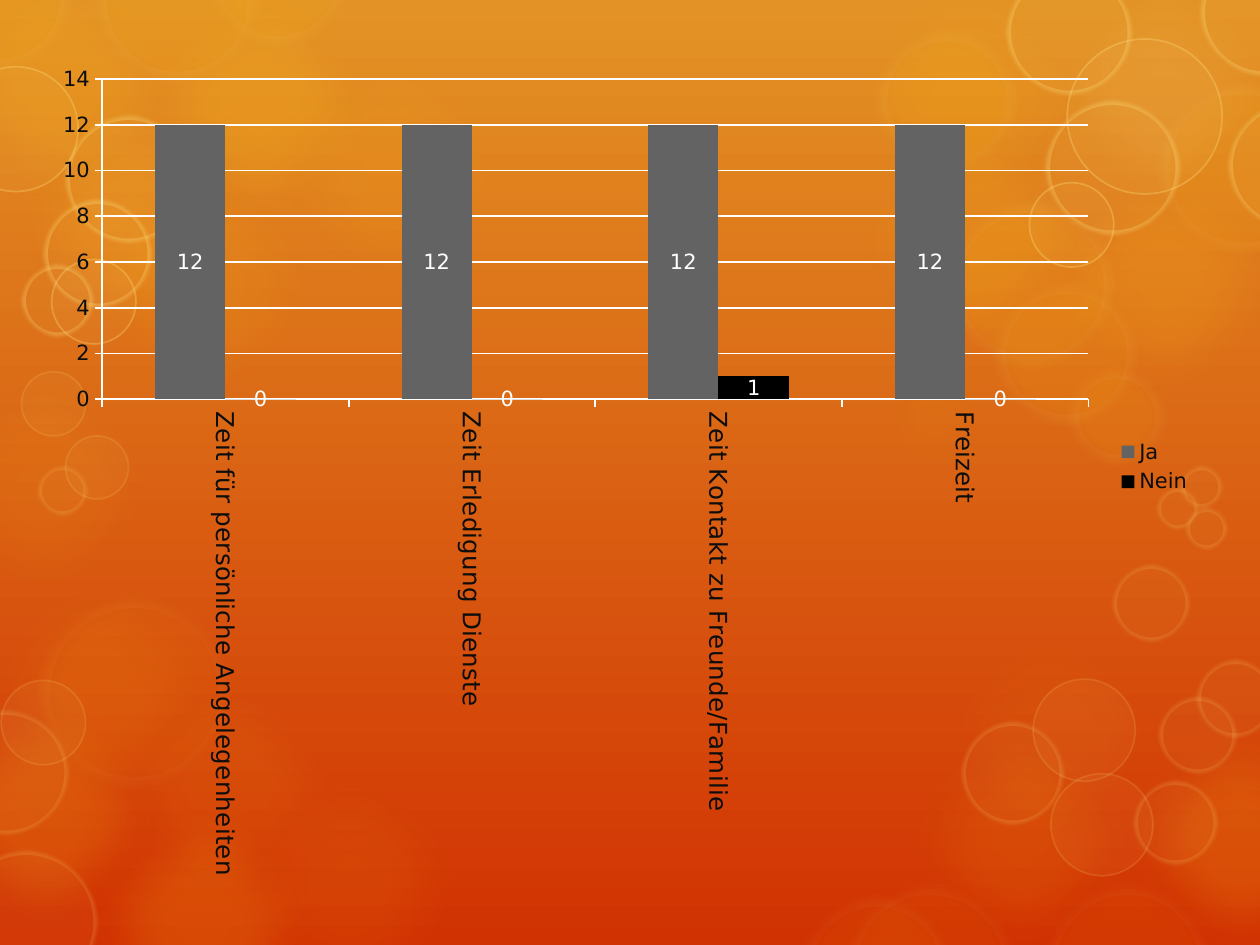
import pptx
import pptx.chart.data
import pptx.dml.color
import pptx.enum.chart
import pptx.enum.shapes
import pptx.oxml
import pptx.oxml.ns
import pptx.util
from pptx.util import Inches

RGBColor = pptx.dml.color.RGBColor
SKY = RGBColor(0xE3, 0x93, 0x25)
EMBER = RGBColor(0xD1, 0x32, 0x02)
GOLD = RGBColor(0xFD, 0xC6, 0x1B)
PALE_GOLD = RGBColor(0xFF, 0xE2, 0x81)
CREAM = RGBColor(0xFE, 0xEB, 0xAE)
GREY = RGBColor(0x63, 0x63, 0x63)
BLACK = RGBColor(0, 0, 0)
INK = RGBColor(0x0D, 0x0D, 0x0D)
WHITE = RGBColor(0xFF, 0xFF, 0xFF)

FONT = "DejaVu Sans"
GLOW_SIZE = 2.09
GLOW_BLUR = 25
# Line width in points -> blur radius in points
EDGE_BLUR = {1: 0, 5: 2.5, 14: 9}

# left, top, fill opacity in percent
BACK_GLOWS = [
    (-0.26, 4.42, 8), (0.57, 1.2, 10), (2.05, 0.31, 10), (0.57, 6.27, 16),
    (-0.56, -0.32, 14), (1.01, -0.18, 20), (0, 0.72, 15),
]
PALE_GLOWS = [(8.2, -0.32, 10)]
SIDE_GLOWS = [
    (6.69, -0.29, 10), (8.2, 1.2, 15), (8.81, 5.62, 16), (7.29, 4.77, 5),
    (-0.69, 5.41, 16), (0.77, 5.24, 8), (6.69, 0.86, 15), (7.06, 5.62, 10),
]
FRONT_GLOWS = [(1.73, 5.96, 8), (-0.7, 2.82, 8)]

# left, top, diameter
TOP_HALOS = [
    (9.18, 0.65, 1.37), (6.94, 0.23, 1.14), (7.52, 1.59, 1.33), (7.89, 2.24, 1.14),
    (8.47, 2.91, 0.79), (0.75, -0.65, 1.31), (1.64, -0.75, 1.13), (-0.57, -0.58, 1.14),
]
BOTTOM_HALOS = [(0.3, 4.73, 1.53), (6.33, 7.1, 1.24), (6.7, 7.01, 1.37), (8.28, 7.01, 1.34)]

# left, top, diameter, line width in points
TOP_BUBBLES = [
    (-0.37, 0.53, 0.99, 1), (0.52, 0.92, 1, 5), (0.35, 1.59, 0.85, 5),
    (0.41, 2.06, 0.67, 1), (0.17, 2.1, 0.57, 5), (7.99, -0.24, 0.99, 5),
    (9.53, -0.4, 1, 5), (8.47, 0.31, 1.23, 1), (9.75, 0.82, 0.99, 5),
    (8.3, 0.8, 1.06, 5), (8.17, 1.45, 0.67, 1),
]
BOTTOM_BUBBLES = [
    (0.01, 5.4, 0.67, 1), (-0.36, 6.75, 1.13, 5), (-0.44, 5.64, 0.98, 5),
    (8.34, 6.14, 0.81, 1), (7.63, 5.73, 0.81, 5), (8.2, 5.39, 0.81, 1),
    (9, 6.2, 0.66, 5), (8.83, 4.48, 0.61, 5), (9.2, 5.53, 0.61, 5),
    (9.5, 5.24, 0.61, 5), (9.37, 3.7, 0.33, 5), (9.18, 3.87, 0.33, 5),
    (9.41, 4.03, 0.33, 5), (0.17, 2.95, 0.51, 1), (0.52, 3.46, 0.5, 1),
    (0.3, 3.7, 0.39, 5),
]

CATEGORIES = [
    "Zeit für persönliche Angelegenheiten", "Zeit Erledigung Dienste",
    "Zeit Kontakt zu Freunde/Familie", "Freizeit",
]
SERIES = [("Ja", (12, 12, 12, 12), GREY), ("Nein", (0, 0, 1, 0), BLACK)]


def set_opacity(fill, color, percent):
    fill.solid()
    fill.fore_color.rgb = color
    color_element = fill._xPr.find(pptx.oxml.ns.qn("a:solidFill"))[0]
    color_element.append(pptx.oxml.parse_xml(
        f'<a:alpha {pptx.oxml.ns.nsdecls("a")} val="{percent * 1000}"/>'))


def soften(shape, radius):
    effects = shape._element.spPr.find(pptx.oxml.ns.qn("a:effectLst"))
    effects.append(pptx.oxml.parse_xml(
        f'<a:softEdge {pptx.oxml.ns.nsdecls("a")} rad="{pptx.util.Pt(radius)}"/>'))


def add_circle(slide, left, top, size, color, opacity, blur, line=None):
    """line is (color, width in points, opacity) or None."""
    shape = slide.shapes.add_shape(pptx.enum.shapes.MSO_SHAPE.OVAL, Inches(left),
                                   Inches(top), Inches(size), Inches(size))
    shape.shadow.inherit = False
    set_opacity(shape.fill, color, opacity)
    if line:
        line_color, line_width, line_opacity = line
        shape.line.width = pptx.util.Pt(line_width)
        set_opacity(shape.line.fill, line_color, line_opacity)
    else:
        shape.line.fill.background()
    if blur:
        soften(shape, blur)


def add_glows(slide, glows, color):
    for left, top, opacity in glows:
        add_circle(slide, left, top, GLOW_SIZE, color, opacity, GLOW_BLUR)


def add_halos(slide, halos, opacity, line_opacity):
    for left, top, size in halos:
        add_circle(slide, left, top, size, GOLD, opacity, EDGE_BLUR[14],
                   (CREAM, 14, line_opacity))


def add_bubbles(slide, bubbles, line_opacity):
    for left, top, size, width in bubbles:
        add_circle(slide, left, top, size, PALE_GOLD, 5, EDGE_BLUR[width],
                   (PALE_GOLD, width, line_opacity))


def set_font(font, size, color=INK):
    font.name = FONT
    font.size = pptx.util.Pt(size)
    font.color.rgb = color


def style_axis(axis, size):
    axis.major_tick_mark = pptx.enum.chart.XL_TICK_MARK.OUTSIDE
    axis.minor_tick_mark = pptx.enum.chart.XL_TICK_MARK.NONE
    axis.format.line.color.rgb = WHITE
    axis.format.line.width = pptx.util.Pt(1)
    set_font(axis.tick_labels.font, size)


def place_plot(chart, x, y, width, height):
    """Fix the inner plot area, in fractions of the chart."""
    plot_area = chart._chartSpace.chart.plotArea
    for layout in plot_area.findall(pptx.oxml.ns.qn("c:layout")):
        plot_area.remove(layout)
    values = "".join(f'<c:{name} val="{value}"/>' for name, value in
                     (("x", x), ("y", y), ("w", width), ("h", height)))
    plot_area.insert(0, pptx.oxml.parse_xml(
        f'<c:layout {pptx.oxml.ns.nsdecls("c")}><c:manualLayout>'
        '<c:layoutTarget val="inner"/><c:xMode val="edge"/><c:yMode val="edge"/>'
        f'{values}</c:manualLayout></c:layout>'))


def add_time_chart(slide):
    data = pptx.chart.data.CategoryChartData()
    data.categories = CATEGORIES
    for name, values, _ in SERIES:
        data.add_series(name, values)
    chart = slide.shapes.add_chart(
        pptx.enum.chart.XL_CHART_TYPE.COLUMN_CLUSTERED,
        Inches(0.35), Inches(0.36), Inches(9.21), Inches(6.69), data).chart
    set_font(chart.font, 18)
    chart.has_title = False
    chart.has_legend = True
    chart.legend.position = pptx.enum.chart.XL_LEGEND_POSITION.RIGHT
    chart.legend.include_in_layout = False
    set_font(chart.legend.font, 12)

    plot = chart.plots[0]
    plot.gap_width = 150
    plot.overlap = 0
    plot.vary_by_categories = False
    for series, (_, _, color) in zip(plot.series, SERIES):
        series.format.fill.solid()
        series.format.fill.fore_color.rgb = color
        series.invert_if_negative = False
        labels = series.data_labels
        labels.show_value = True
        labels.position = pptx.enum.chart.XL_LABEL_POSITION.CENTER
        set_font(labels.font, 12, WHITE)

    style_axis(chart.category_axis, 14)
    chart.category_axis._element.txPr.bodyPr.set("rot", "5400000")
    style_axis(chart.value_axis, 12)
    chart.value_axis.minimum_scale = 0
    chart.value_axis.maximum_scale = 14
    chart.value_axis.major_unit = 2
    gridline = chart.value_axis.major_gridlines.format.line
    gridline.color.rgb = WHITE
    gridline.width = pptx.util.Pt(1)
    place_plot(chart, 0.05, 0.04, 0.85, 0.38)


def paint_background(slide):
    fill = slide.background.fill
    fill.gradient()
    fill.gradient_angle = 270
    for stop, color, position in zip(fill.gradient_stops, (SKY, EMBER), (0, 1)):
        stop.color.rgb = color
        stop.position = position


def main():
    presentation = pptx.Presentation()
    presentation.slide_width = Inches(10)
    presentation.slide_height = Inches(7.5)
    slide = presentation.slides.add_slide(presentation.slide_layouts[6])
    paint_background(slide)
    add_glows(slide, BACK_GLOWS, GOLD)
    add_glows(slide, PALE_GLOWS, PALE_GOLD)
    add_glows(slide, SIDE_GLOWS, GOLD)
    add_halos(slide, TOP_HALOS, 10, 6)
    add_halos(slide, BOTTOM_HALOS, 6, 4)
    add_bubbles(slide, TOP_BUBBLES, 30)
    add_bubbles(slide, BOTTOM_BUBBLES, 15)
    add_glows(slide, FRONT_GLOWS, GOLD)
    add_circle(slide, 6.75, 2.62, 1.33, GOLD, 10, GLOW_BLUR)
    add_time_chart(slide)
    presentation.save("out.pptx")


if __name__ == "__main__":
    main()
